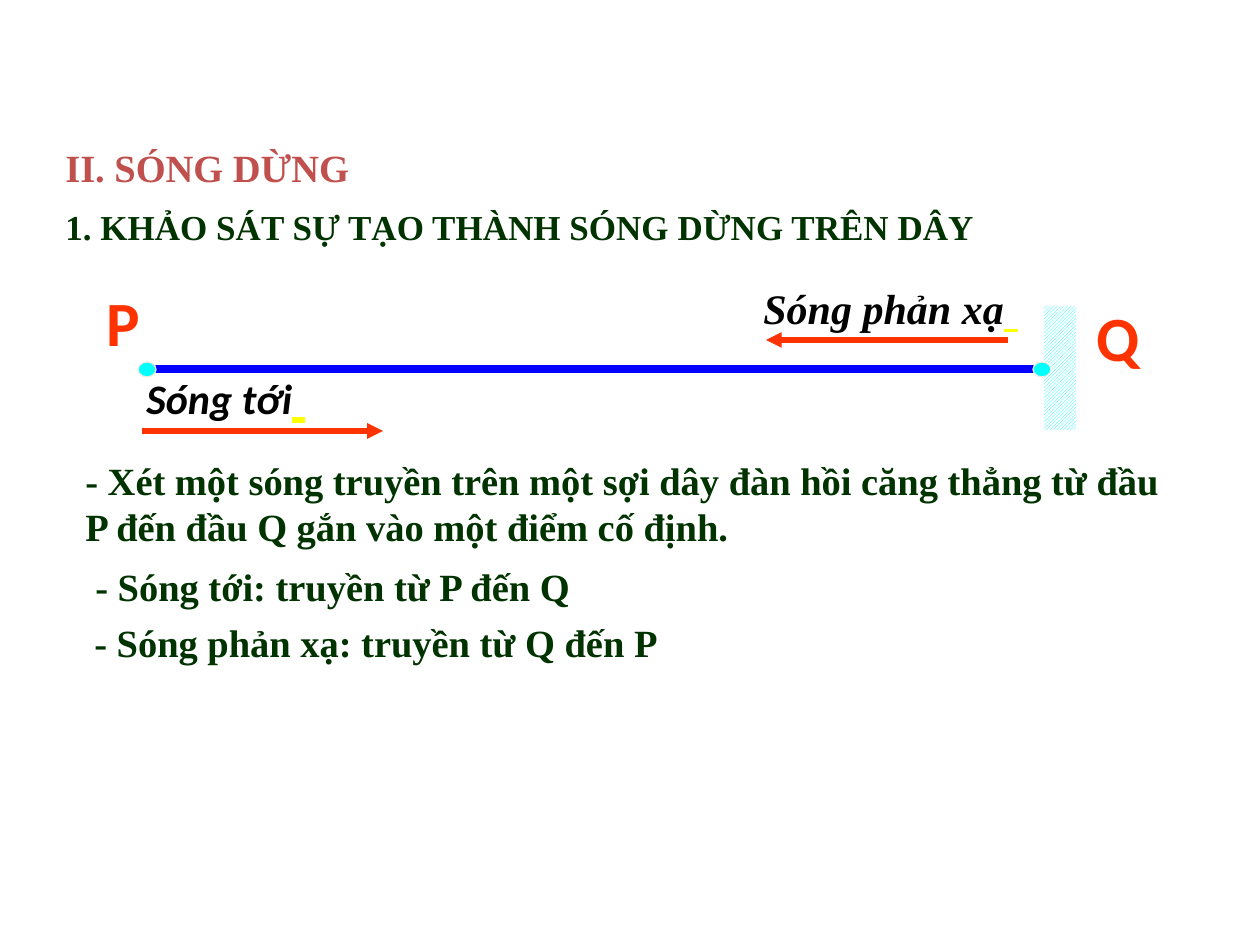
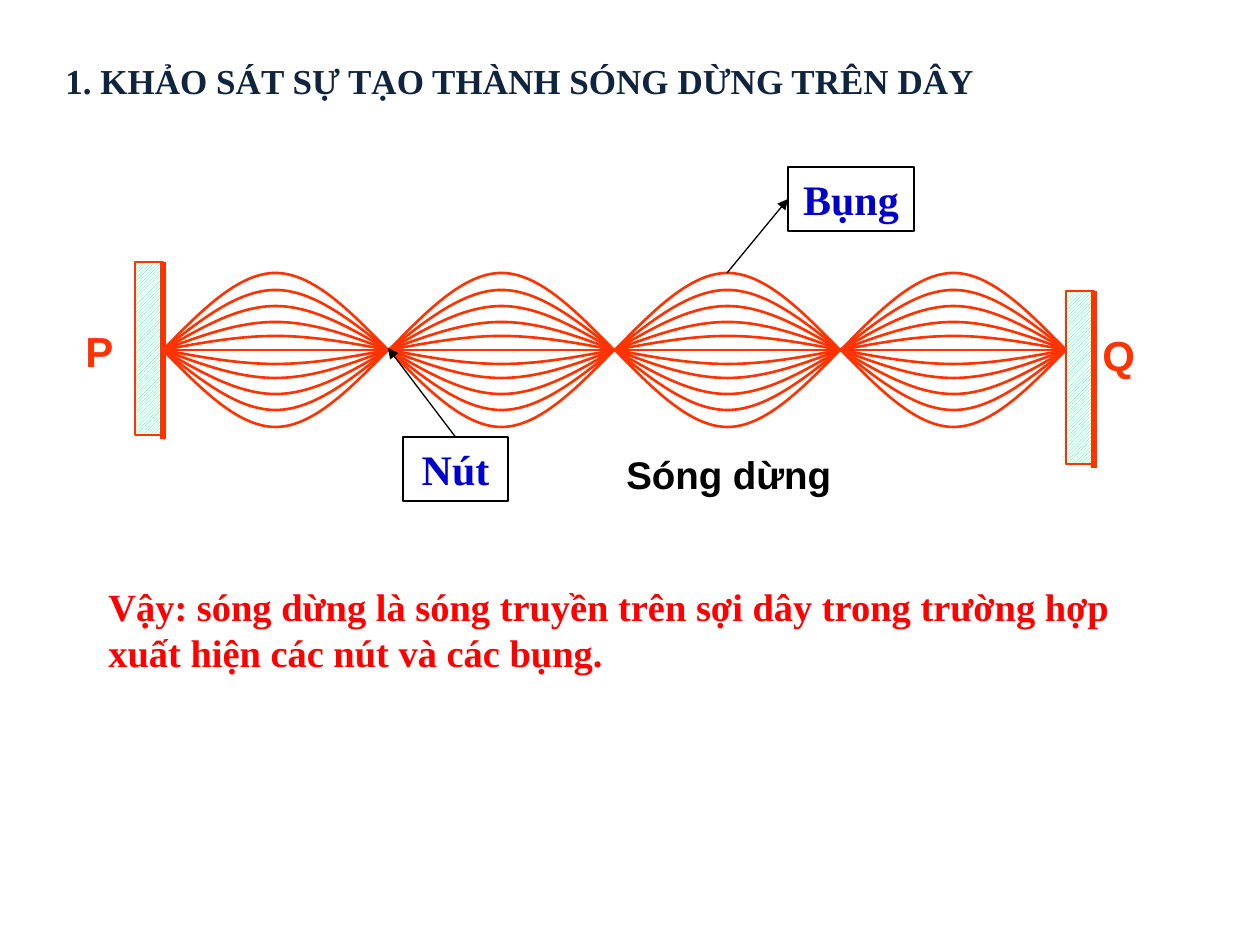
from lxml.etree import SubElement
from pptx import Presentation
from pptx.dml.color import RGBColor
from pptx.enum.dml import MSO_PATTERN as Pattern
from pptx.enum.shapes import MSO_CONNECTOR as Link, MSO_SHAPE as Shape
from pptx.enum.text import MSO_ANCHOR as Anchor, PP_ALIGN as Align
from pptx.oxml.ns import qn
from pptx.util import Emu, Pt

# Scale and shared style
SCALE = 914400 / 126
SERIF, SANS, BODY = "Times New Roman", "Arial", "Calibri"
TITLE = "1. KHẢO SÁT SỰ TẠO THÀNH SÓNG DỪNG TRÊN DÂY"
WIDE = 1099

BLACK = RGBColor(0x00, 0x00, 0x00)
WHITE = RGBColor(0xFF, 0xFF, 0xFF)
GREEN = RGBColor(0x00, 0x33, 0x00)
NAVY = RGBColor(0x0F, 0x24, 0x3E)
BRICK = RGBColor(0xC0, 0x50, 0x4D)
ORANGE = RGBColor(0xFF, 0x33, 0x00)
RED = RGBColor(0xFF, 0x00, 0x00)
BLUE = RGBColor(0x00, 0x00, 0xFF)
INK = RGBColor(0x00, 0x00, 0xCC)
CYAN = RGBColor(0x00, 0xFF, 0xFF)
MINT = RGBColor(0x00, 0xFF, 0x99)
CREAM = RGBColor(0xEE, 0xEC, 0xE1)
YELLOW = RGBColor(0xFF, 0xFF, 0x00)


def px(n):
    return Emu(round(n * SCALE))


def style(item, fmt):
    for key, value in fmt.items():
        setattr(item, key, value)


def stroke(line, color, width):
    line.color.rgb = color
    line.width = Pt(width)


def write(para, text, size, color, font=SERIF, **fmt):
    run = para.add_run()
    run.text = text
    style(run.font, {"name": font, "size": Pt(size), "bold": True, **fmt})
    run.font.color.rgb = color


def label(slide, box, text, size, color, font=SERIF, **fmt):
    frame = slide.shapes.add_textbox(*map(px, box)).text_frame
    frame.word_wrap = True
    write(frame.paragraphs[0], text, size, color, font, **fmt)
    return frame


def title(slide, y, color):
    label(slide, (53, y, WIDE, 54), TITLE, 20, color)


def wave_name(slide, box, text, font):
    """Italic name that ends in a yellow underlined space."""
    frame = label(slide, box, text, 24, BLACK, font, italic=True)
    write(frame.paragraphs[0], " ", 32, YELLOW, font, bold=False, underline=True)


def rule(slide, start, end, color, width, arrow=False):
    line = slide.shapes.add_connector(Link.STRAIGHT, *map(px, start + end))
    stroke(line.line, color, width)
    if arrow:
        SubElement(line.line._get_or_add_ln(), qn("a:tailEnd"), type="triangle")
    SubElement(line._element.spPr, qn("a:effectLst"))
    return line


def solid(slide, kind, box):
    shape = slide.shapes.add_shape(kind, *map(px, box))
    shape.shadow.inherit = False
    return shape


def wall(slide, box, color, edge=None):
    shape = solid(slide, Shape.RECTANGLE, box)
    shape.fill.patterned()
    shape.fill.pattern = Pattern.DARK_UPWARD_DIAGONAL
    shape.fill.fore_color.rgb = color
    shape.fill.back_color.rgb = WHITE
    if edge is None:
        shape.line.fill.background()
        return
    stroke(shape.line, edge, 0.75)
    x, y, w, h = box
    rule(slide, (x + w, y), (x + w, y + h + 4), edge, 3)


def dot(slide, x, y):
    shape = solid(slide, Shape.OVAL, (x - 9, y - 7, 18, 15))
    shape.fill.solid()
    shape.fill.fore_color.rgb = CYAN
    stroke(shape.line, CREAM, 0.75)


def tag(slide, box, text):
    shape = solid(slide, Shape.RECTANGLE, box)
    shape.fill.background()
    stroke(shape.line, BLACK, 0.75)
    style(shape.text_frame, {"vertical_anchor": Anchor.TOP, "word_wrap": True})
    para = shape.text_frame.paragraphs[0]
    para.alignment = Align.CENTER
    write(para, text, 24, INK)
    return shape


def bend(shape):
    """Turn each three straight steps of an outline into one Bézier curve."""
    outline = next(shape._element.iter(qn("a:path")))
    steps = outline.findall(qn("a:lnTo"))
    for i in range(0, len(steps), 3):
        curve = SubElement(outline, qn("a:cubicBezTo"))
        for step in steps[i:i + 3]:
            curve.append(step[0])
            outline.remove(step)


def arc(slide, x, y, width, amp):
    lifts = (0, 0.5, 1, 1, 1, 0.5, 0)
    dots = [(px(x + width * i / 6), px(y - amp * lift))
            for i, lift in enumerate(lifts)]
    pen = slide.shapes.build_freeform(*dots[0])
    pen.add_line_segments(dots[1:], close=False)
    shape = pen.convert_to_shape()
    bend(shape)
    shape.shadow.inherit = False
    shape.fill.background()
    stroke(shape.line, ORANGE, 1.5)


def loop(slide, x, y, width):
    rule(slide, (x, y), (x + width, y), ORANGE, 1.5)
    for amp in (14, 28, 44, 60, 77):
        for sign in (1, -1):
            arc(slide, x, y, width, sign * amp)


def rope_slide(slide):
    # Headings
    title(slide, 199, GREEN)
    head = label(slide, (53, 141, 315, 53), "II. SÓNG DỪNG", 22, BRICK)
    head.vertical_anchor = Anchor.MIDDLE

    # Rope from P to the wall at Q
    wave_name(slide, (751, 262, 296, 81), "Sóng phản xạ", SERIF)
    wave_name(slide, (134, 352, 227, 79), "Sóng tới", BODY)
    label(slide, (94, 277, 86, 88), "P", 36, ORANGE, BODY)
    label(slide, (1084, 292, 92, 88), "Q", 36, ORANGE, BODY)
    rule(slide, (147, 369), (1065, 369), BLUE, 4.5)
    wall(slide, (1044, 306, 32, 124), CYAN)
    for x in (147, 1042):
        dot(slide, x, 369)
    rule(slide, (1008, 340), (766, 340), ORANGE, 3, arrow=True)
    rule(slide, (142, 431), (383, 431), ORANGE, 3, arrow=True)

    # Explanation
    for x, y, high, text in (
        (73, 451, 105, "- Xét một sóng truyền trên một sợi dây đàn hồi căng thẳng từ "
                       "đầu P đến đầu Q gắn vào một điểm cố định."),
        (83, 557, 59, "- Sóng tới: truyền từ P đến Q"),
        (82, 613, 59, "- Sóng phản xạ: truyền từ Q đến P"),
    ):
        label(slide, (x, y, WIDE, high), text, 22, GREEN)


def standing_slide(slide):
    title(slide, 53, NAVY)

    # Four loops between two walls
    left, mid, step = 163, 350, 226
    for i in range(4):
        loop(slide, left + i * step, mid, step - 1)
    for x, y in ((135, 262), (1066, 291)):
        wall(slide, (x, y, 28, 173), MINT, ORANGE)
    label(slide, (73, 319, 97, 63), "P", 24, ORANGE, SANS)
    label(slide, (1090, 323, 97, 63), "Q", 24, ORANGE, SANS)

    # Node and antinode
    node = tag(slide, (403, 437, 105, 64), "Nút")
    peak = tag(slide, (788, 167, 126, 64), "Bụng")
    line = rule(slide, (456, 437), (left + step - 1, mid - 2), BLACK, 0.75, arrow=True)
    line.begin_connect(node, 0)
    line = rule(slide, (727, mid - 77), (788, 199), BLACK, 0.75, arrow=True)
    line.end_connect(peak, 1)

    # Name and conclusion
    label(slide, (614, 445, 242, 59), "Sóng dừng", 22, BLACK, SANS)
    label(slide, (96, 577, WIDE, 106),
          "Vậy: sóng dừng là sóng truyền trên sợi dây trong trường hợp "
          "xuất hiện các nút và các bụng.", 22, RED)


def main():
    deck = Presentation()
    style(deck, {"slide_width": px(1260), "slide_height": px(945)})
    for draw in (rope_slide, standing_slide):
        draw(deck.slides.add_slide(deck.slide_layouts[6]))
    deck.save("out.pptx")


if __name__ == "__main__":
    main()
